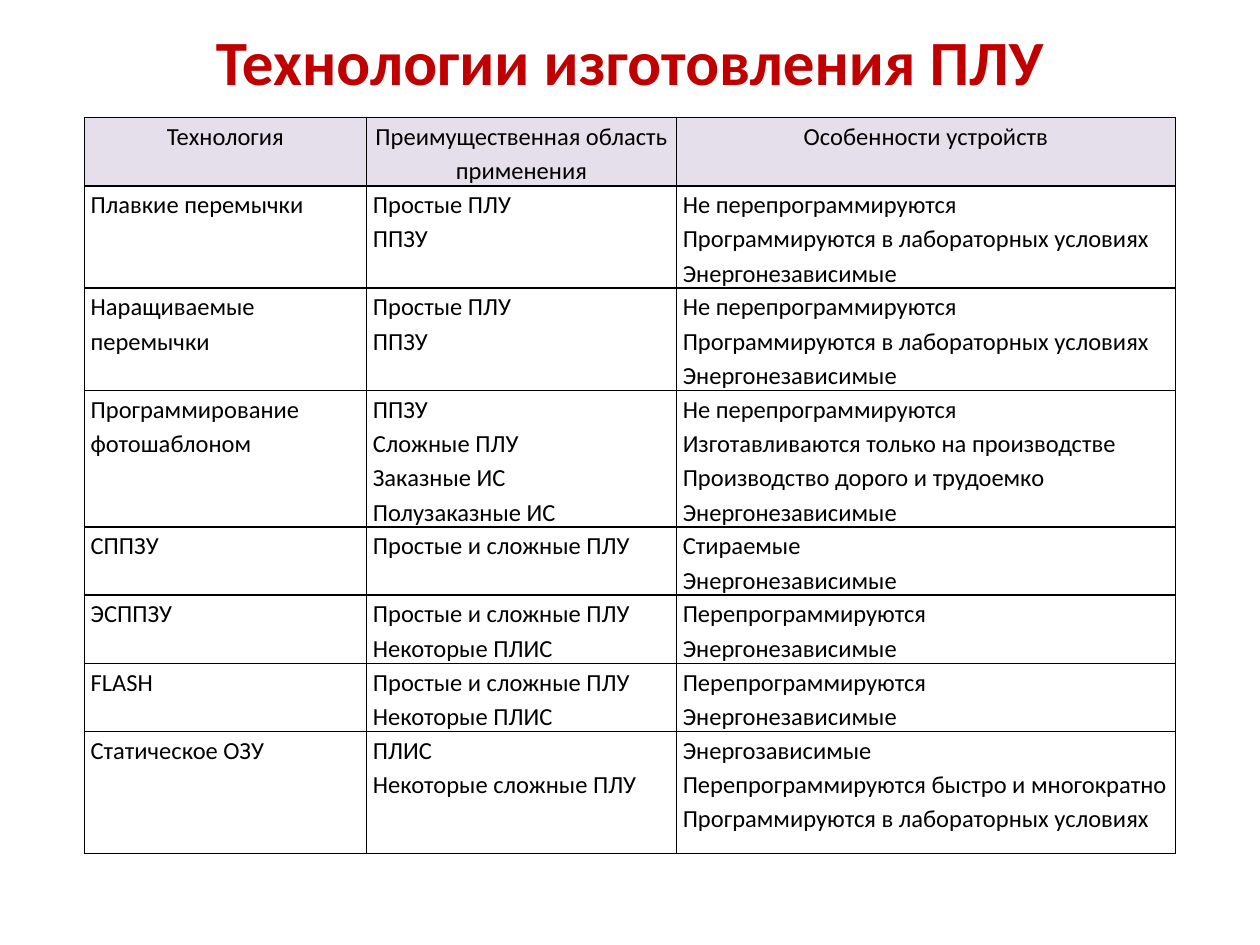
from lxml.etree import SubElement
from pptx import Presentation
from pptx.dml.color import RGBColor
from pptx.enum.text import MSO_ANCHOR, PP_ALIGN
from pptx.oxml.ns import qn
from pptx.util import Pt

# Content: each cell is a list of paragraphs
TITLE = "Технологии изготовления ПЛУ"
HEADER = (["Технология"], ["Преимущественная область применения"],
          ["Особенности устройств"])
FIXED = "Не перепрограммируются"
REWRITABLE = "Перепрограммируются"
IN_LAB = "Программируются в лабораторных условиях"
NONVOLATILE = "Энергонезависимые"
SIMPLE = ["Простые ПЛУ", "ППЗУ"]
ALL_PLD = "Простые и сложные ПЛУ"
SOME_FPGA = "Некоторые ПЛИС"
TECHNOLOGIES = [
    (["Плавкие перемычки"], SIMPLE, [FIXED, IN_LAB, NONVOLATILE]),
    (["Наращиваемые перемычки"], SIMPLE, [FIXED, IN_LAB, NONVOLATILE]),
    (["Программирование фотошаблоном"],
     ["ППЗУ", "Сложные ПЛУ", "Заказные ИС", "Полузаказные ИС"],
     [FIXED, "Изготавливаются только на производстве",
      "Производство дорого и трудоемко", NONVOLATILE]),
    (["СППЗУ"], [ALL_PLD], ["Стираемые", NONVOLATILE]),
    (["ЭСППЗУ"], [ALL_PLD, SOME_FPGA], [REWRITABLE, NONVOLATILE]),
    (["FLASH"], [ALL_PLD, SOME_FPGA], [REWRITABLE, NONVOLATILE]),
    (["Статическое ОЗУ"], ["ПЛИС", "Некоторые сложные ПЛУ"],
     ["Энергозависимые", "Перепрограммируются быстро и многократно", IN_LAB]),
]
ROWS = [HEADER] + TECHNOLOGIES

FONT = "Calibri"
RED = RGBColor(0xC0, 0x00, 0x00)
BLACK = RGBColor(0x00, 0x00, 0x00)
LILAC = RGBColor(0xE5, 0xDF, 0xEC)

# Geometry in points
COLUMN_WIDTHS = (161.3, 177.1, 285.1)
LINE_HEIGHT = 19.5
MIN_LINES = 2
LAST_ROW_HEIGHT = 69.8


def style(para, size, color, bold=False):
    para.font.name = FONT
    para.font.size = Pt(size)
    para.font.bold = bold
    para.font.color.rgb = color


def add_borders(cell):
    properties = cell._tc.get_or_add_tcPr()
    for index, side in enumerate(("lnL", "lnR", "lnT", "lnB")):
        line = properties.makeelement(qn(f"a:{side}"), {"w": str(Pt(1))})
        properties.insert(index, line)
        fill = SubElement(line, qn("a:solidFill"))
        SubElement(fill, qn("a:srgbClr"), val=str(BLACK))


def fill_cell(cell, lines, is_header):
    cell.margin_left = cell.margin_right = Pt(3.6)
    cell.margin_top = cell.margin_bottom = Pt(0)
    cell.text = "\n".join(lines)
    for para in cell.text_frame.paragraphs:
        para.line_spacing = 1.15
        para.alignment = PP_ALIGN.CENTER if is_header else PP_ALIGN.LEFT
        style(para, 14, BLACK)
    if is_header:
        cell.fill.solid()
        cell.fill.fore_color.rgb = LILAC
    else:
        cell.fill.background()
    add_borders(cell)


deck = Presentation()
deck.slide_width, deck.slide_height = Pt(720), Pt(540)
page = deck.slides.add_slide(deck.slide_layouts[6])

# Title
box = page.shapes.add_textbox(Pt(36), Pt(9.4), Pt(648), Pt(49.7))
frame = box.text_frame
frame.word_wrap = True
frame.vertical_anchor = MSO_ANCHOR.MIDDLE
para = frame.paragraphs[0]
para.text = TITLE
para.alignment = PP_ALIGN.CENTER
style(para, 36, RED, bold=True)

# Table: row heights follow the longest cell
heights = [LINE_HEIGHT * max(MIN_LINES, *map(len, row)) for row in ROWS]
heights[-1] = LAST_ROW_HEIGHT
table = page.shapes.add_table(
    len(ROWS), len(COLUMN_WIDTHS), Pt(48.2), Pt(67.2),
    Pt(sum(COLUMN_WIDTHS)), Pt(sum(heights))).table
table.horz_banding = False
table.first_row = False
for column, width in zip(table.columns, COLUMN_WIDTHS):
    column.width = Pt(width)
for r, (row, height) in enumerate(zip(ROWS, heights)):
    table.rows[r].height = Pt(height)
    for c, lines in enumerate(row):
        fill_cell(table.cell(r, c), lines, is_header=r == 0)

deck.save("out.pptx")
